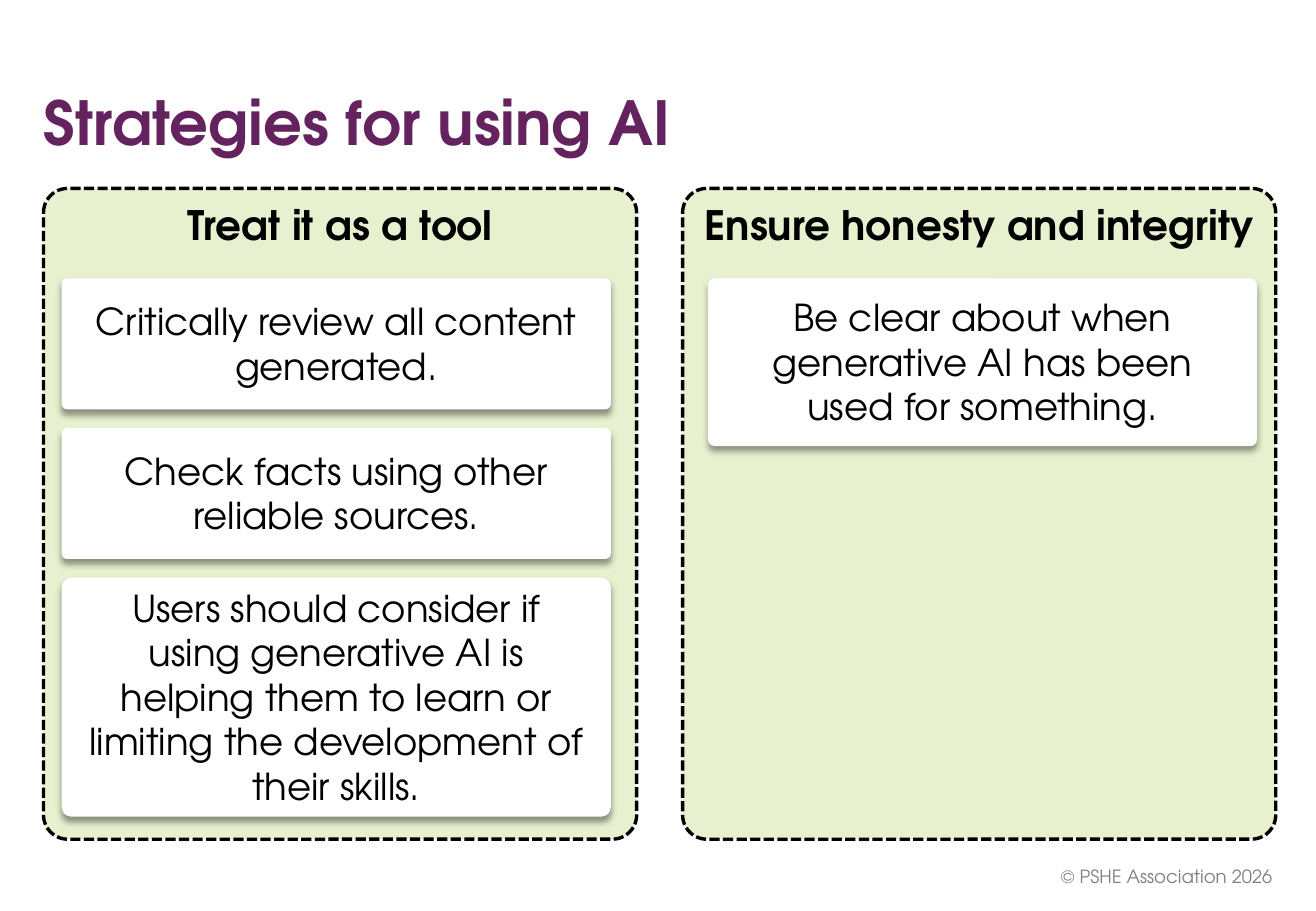
import lxml.etree
import pptx
import pptx.util
import pptx.dml.color
import pptx.enum.dml
import pptx.enum.shapes
import pptx.enum.text
import pptx.oxml.ns

Cm = pptx.util.Cm
Pt = pptx.util.Pt
Align = pptx.enum.text.PP_ALIGN
Anchor = pptx.enum.text.MSO_ANCHOR

# Content
TITLE = "Strategies for using AI"
COPYRIGHT = "© PSHE Association 2026"
# Each panel: heading, card inset from the panel edge, cards as (text, height), in cm
PANELS = [
    ("Treat it as a tool", 0.38, [
        ("Critically review all content generated.", 2.74),
        ("Check facts using other reliable sources.", 2.74),
        ("Users should consider if using generative AI is helping them to learn "
         "or limiting the development of their skills.", 5.0),
    ]),
    ("Ensure honesty and integrity", 0.53, [
        ("Be clear about when generative AI has been used for something.", 3.51),
    ]),
]

# Colours and text formats
PURPLE = pptx.dml.color.RGBColor(0x64, 0x23, 0x5E)
GREEN = pptx.dml.color.RGBColor(0xE7, 0xF1, 0xCF)
GREY = pptx.dml.color.RGBColor(0x80, 0x80, 0x80)
BLACK = pptx.dml.color.RGBColor(0, 0, 0)
WHITE = pptx.dml.color.RGBColor(0xFF, 0xFF, 0xFF)
FONT = "TeX Gyre Adventor"
TITLE_FONT = {"name": FONT, "size": Pt(36), "bold": True}
HEADING_FONT = {"name": FONT, "size": Pt(24), "bold": True}
CARD_FONT = {"name": FONT, "size": Pt(22), "bold": False}
COPYRIGHT_FONT = {"name": FONT, "size": Pt(10.8), "bold": False}

# Layout, in cm
PANEL_LEFT, PANEL_TOP, PANEL_WIDTH, PANEL_HEIGHT = 0.91, 3.94, 12.4, 13.61
PANEL_PITCH = 13.36
CARD_TOP, CARD_WIDTH, CARD_GAP = 5.82, 11.48, 0.39
CORNER = 0.041


def write_text(shape, text, font_format, colour, alignment, anchor, margins=None):
    frame = shape.text_frame
    frame.word_wrap = True
    frame.vertical_anchor = anchor
    for side, margin in (margins or {}).items():
        setattr(frame, "margin_" + side, Cm(margin))
    paragraph = frame.paragraphs[0]
    paragraph.alignment = alignment
    run = paragraph.add_run()
    run.text = text
    for name, value in font_format.items():
        setattr(run.font, name, value)
    run.font.color.rgb = colour
    return paragraph


def add_rounded_box(slide, box, fill):
    shape = slide.shapes.add_shape(
        pptx.enum.shapes.MSO_SHAPE.ROUNDED_RECTANGLE, *map(Cm, box))
    shape.adjustments[0] = CORNER
    shape.shadow.inherit = False
    shape.fill.solid()
    shape.fill.fore_color.rgb = fill
    return shape


def add_panel(slide, box, heading):
    panel = add_rounded_box(slide, box, GREEN)
    panel.line.color.rgb = BLACK
    panel.line.width = Pt(2)
    panel.line.dash_style = pptx.enum.dml.MSO_LINE.SQUARE_DOT
    write_text(panel, heading, HEADING_FONT, BLACK, Align.CENTER, Anchor.TOP,
               {"left": 0.25, "top": 0.1, "right": 0.25, "bottom": 0.13})


def add_card(slide, box, text):
    card = add_rounded_box(slide, box, WHITE)
    card.line.fill.background()
    # Soft shadow straight below the card
    qn = pptx.oxml.ns.qn
    effects = card.element.spPr.find(qn("a:effectLst"))
    shadow = lxml.etree.SubElement(
        effects, qn("a:outerShdw"), blurRad=str(Pt(4)), dist=str(Pt(3)),
        dir="5400000", algn="t", rotWithShape="0")
    colour = lxml.etree.SubElement(shadow, qn("a:srgbClr"), val="000000")
    lxml.etree.SubElement(colour, qn("a:alpha"), val="40000")
    write_text(card, text, CARD_FONT, BLACK, Align.CENTER, Anchor.MIDDLE,
               {"left": 0.41, "top": 0.1, "right": 0.41, "bottom": 0.13})


def main():
    presentation = pptx.Presentation()
    presentation.slide_width = Cm(27.51)
    presentation.slide_height = Cm(19.05)
    slide = presentation.slides.add_slide(presentation.slide_layouts[6])

    # Title and copyright line
    title = slide.shapes.add_textbox(Cm(0.66), Cm(1.5), Cm(21.54), Cm(1.93))
    paragraph = write_text(title, TITLE, TITLE_FONT, PURPLE, Align.LEFT, Anchor.BOTTOM)
    paragraph.line_spacing = Pt(43)
    footer = slide.shapes.add_textbox(Cm(20.65), Cm(17.81), Cm(6.2), Cm(1.02))
    write_text(footer, COPYRIGHT, COPYRIGHT_FONT, GREY, Align.RIGHT, Anchor.MIDDLE)

    # Panels with their stacked cards
    for index, (heading, card_inset, cards) in enumerate(PANELS):
        left = PANEL_LEFT + index * PANEL_PITCH
        add_panel(slide, (left, PANEL_TOP, PANEL_WIDTH, PANEL_HEIGHT), heading)
        top = CARD_TOP
        for text, height in cards:
            add_card(slide, (left + card_inset, top, CARD_WIDTH, height), text)
            top += height + CARD_GAP

    presentation.save("out.pptx")


if __name__ == "__main__":
    main()
